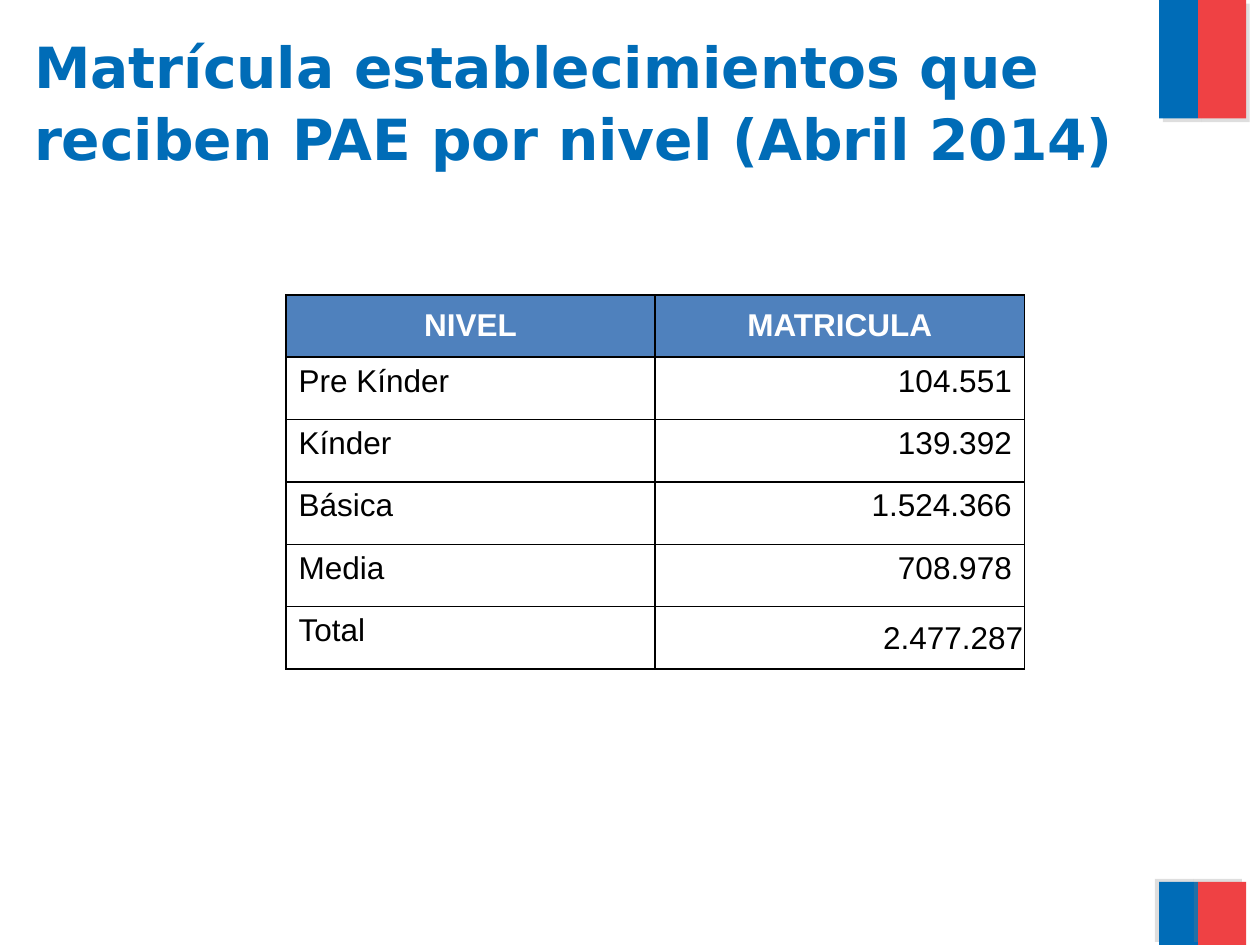
"""Build a slide with a table of school enrolment by level."""
import pptx
import pptx.util
import pptx.dml.color
import pptx.enum.shapes
import pptx.enum.text
import pptx.oxml
import pptx.oxml.ns

Inches, Pt = pptx.util.Inches, pptx.util.Pt
RGBColor = pptx.dml.color.RGBColor
Align = pptx.enum.text.PP_ALIGN
Anchor = pptx.enum.text.MSO_ANCHOR

BLUE = RGBColor(0x00, 0x6C, 0xB7)
RED = RGBColor(0xEF, 0x41, 0x44)
HEAD = RGBColor(0x4F, 0x81, 0xBD)
WHITE = RGBColor(0xFF, 0xFF, 0xFF)
BLACK = RGBColor(0, 0, 0)

TITLE = "Matrícula establecimientos que reciben PAE por nivel (Abril 2014)"
ROWS = [
    ("NIVEL", "MATRICULA"),
    ("Pre Kínder", "104.551"),
    ("Kínder", "139.392"),
    ("Básica", "1.524.366"),
    ("Media", "708.978"),
    ("Total", "2.477.287"),
]
BANDS = [
    (9.2, -0.01, 0.31, 0.95, BLUE, 45),
    (9.51, 0, 0.38, 0.94, RED, 45),
    (9.2, 7, 0.31, 0.5, BLUE, 215),
    (9.51, 7, 0.38, 0.5, RED, 215),
]
LEFT, TOP, COL, ROW = 2.27, 2.34, 2.93, 0.495
NS = pptx.oxml.ns.nsdecls("a")


def add_band(slide, left, top, width, height, color, angle):
    band = slide.shapes.add_shape(
        pptx.enum.shapes.MSO_SHAPE.RECTANGLE,
        Inches(left), Inches(top), Inches(width), Inches(height))
    band.fill.solid()
    band.fill.fore_color.rgb = color
    band.line.fill.background()
    band.shadow.inherit = False
    glow = band._element.spPr.find(pptx.oxml.ns.qn("a:effectLst"))
    glow.append(pptx.oxml.parse_xml(
        f'<a:outerShdw {NS} blurRad="0" dist="{Pt(3)}" dir="{angle * 60000}" '
        'algn="ctr" rotWithShape="0"><a:srgbClr val="808080">'
        '<a:alpha val="25000"/></a:srgbClr></a:outerShdw>'))


def add_text(para, text, font, size, color, bold):
    run = para.add_run()
    run.text = text
    run.font.name = font
    run.font.size = Pt(size)
    run.font.color.rgb = color
    run.font.bold = bold


def add_edges(cell):
    props = cell._tc.get_or_add_tcPr()
    for spot, side in enumerate(("lnL", "lnR", "lnT", "lnB")):
        props.insert(spot, pptx.oxml.parse_xml(
            f'<a:{side} {NS} w="{Pt(1)}"><a:solidFill><a:srgbClr val="{BLACK}"/>'
            f'</a:solidFill></a:{side}>'))


def add_grid(slide):
    cols = len(ROWS[0])
    table = slide.shapes.add_table(
        len(ROWS), cols, Inches(LEFT), Inches(TOP),
        Inches(COL * cols), Inches(ROW * len(ROWS))).table
    table.horz_banding = False
    for r, row in enumerate(ROWS):
        head = r == 0
        for c, text in enumerate(row):
            cell = table.cell(r, c)
            para = cell.text_frame.paragraphs[0]
            para.alignment = Align.CENTER if head else (Align.LEFT, Align.RIGHT)[c]
            add_text(para, text, "Arial", 18, WHITE if head else BLACK, head)
            if head:
                cell.fill.solid()
                cell.fill.fore_color.rgb = HEAD
                cell.vertical_anchor = Anchor.MIDDLE
            else:
                cell.fill.background()
            add_edges(cell)
    total = table.cell(len(ROWS) - 1, 1)
    total.vertical_anchor = Anchor.MIDDLE
    total.margin_left = total.margin_top = total.margin_right = Inches(0.01)
    total.margin_bottom = 0


def main():
    deck = pptx.Presentation()
    deck.slide_width, deck.slide_height = Inches(10), Inches(7.5)
    slide = deck.slides.add_slide(deck.slide_layouts[5])
    for band in BANDS:
        add_band(slide, *band)
    title = slide.shapes.title
    title.left, title.top = Inches(0.17), Inches(0.17)
    title.width, title.height = Inches(8.93), Inches(1.25)
    frame = title.text_frame
    frame.word_wrap = True
    frame.auto_size = pptx.enum.text.MSO_AUTO_SIZE.NONE
    frame.vertical_anchor = Anchor.MIDDLE
    para = frame.paragraphs[0]
    para.alignment = Align.LEFT
    para.line_spacing = 1.05
    add_text(para, TITLE, "DejaVu Sans", 32.4, BLUE, True)
    add_grid(slide)
    deck.save("out.pptx")


if __name__ == "__main__":
    main()
